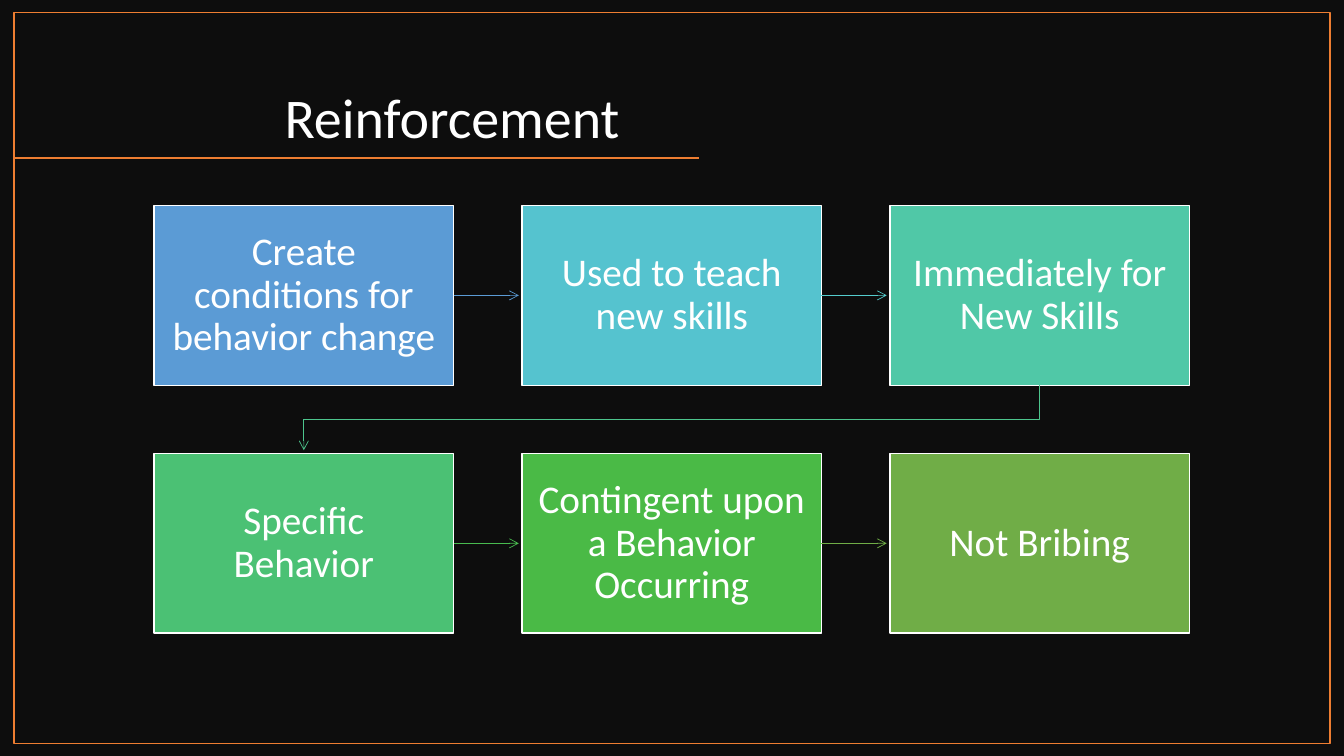
from lxml import etree
from pptx import Presentation
from pptx.dml.color import RGBColor
from pptx.enum.shapes import MSO_CONNECTOR, MSO_SHAPE
from pptx.enum.text import MSO_ANCHOR, PP_ALIGN
from pptx.oxml.ns import qn
from pptx.util import Pt

NIGHT = RGBColor(0x0D, 0x0D, 0x0D)
WHITE = RGBColor(0xFF, 0xFF, 0xFF)
ORANGE = RGBColor(0xED, 0x7D, 0x31)
BLUE = RGBColor(0x5B, 0x9B, 0xD5)
CYAN = RGBColor(0x55, 0xC3, 0xCF)
AQUA = RGBColor(0x54, 0xCC, 0xCD)
TEAL = RGBColor(0x50, 0xC8, 0xA7)
JADE = RGBColor(0x4D, 0xC5, 0x8D)
MINT = RGBColor(0x4B, 0xC1, 0x74)
FERN = RGBColor(0x48, 0xBB, 0x4F)
GREEN = RGBColor(0x4A, 0xBA, 0x46)
OLIVE = RGBColor(0x70, 0xAD, 0x47)

STEPS = [
    ("Create conditions for behavior change", BLUE, BLUE),
    ("Used to teach new skills", CYAN, AQUA),
    ("Immediately for New Skills", TEAL, JADE),
    ("Specific Behavior", MINT, FERN),
    ("Contingent upon a Behavior Occurring", GREEN, OLIVE),
    ("Not Bribing", OLIVE, None),
]
COLUMNS = 3
LEFT, TOP = 110.1, 146.8
STEP_WIDTH, STEP_HEIGHT = 213.9, 128.4
COLUMN_PITCH, ROW_PITCH = 262.8, 177.1
ARROW_GAP = 2.3


class SlideBuilder:
    font = "Calibri"

    def __init__(self, slide):
        self.slide = slide
        fill = slide.background.fill
        fill.solid()
        fill.fore_color.rgb = NIGHT

    def add_text(self, frame, text, size, align, anchor, insets):
        frame.word_wrap = True
        frame.vertical_anchor = anchor
        frame.margin_left, frame.margin_top, frame.margin_right, frame.margin_bottom = map(Pt, insets)
        paragraph = frame.paragraphs[0]
        paragraph.alignment = align
        paragraph.line_spacing = 0.9
        run = paragraph.add_run()
        run.text = text
        run.font.name = self.font
        run.font.size = Pt(size)
        run.font.color.rgb = WHITE

    def title(self, text, left, top, width, height, insets):
        heading = self.slide.shapes.title
        heading.left, heading.top, heading.width, heading.height = map(Pt, (left, top, width, height))
        self.add_text(heading.text_frame, text, 40, PP_ALIGN.RIGHT, MSO_ANCHOR.BOTTOM, insets)

    def box(self, left, top, width, height, outline, fill=None):
        box = self.slide.shapes.add_shape(MSO_SHAPE.RECTANGLE, *map(Pt, (left, top, width, height)))
        box.shadow.inherit = False
        if fill is None:
            box.fill.background()
        else:
            box.fill.solid()
            box.fill.fore_color.rgb = fill
        box.line.color.rgb = outline
        box.line.width = Pt(1)
        return box

    def step(self, text, left, top, fill):
        step = self.box(left, top, STEP_WIDTH, STEP_HEIGHT, WHITE, fill)
        self.add_text(step.text_frame, text, 28, PP_ALIGN.CENTER, MSO_ANCHOR.MIDDLE, [10.8] * 4)

    def line(self, start, end, color, width):
        line = self.slide.shapes.add_connector(MSO_CONNECTOR.STRAIGHT, *map(Pt, start + end))
        line.line.color.rgb = color
        line.line.width = Pt(width)
        etree.SubElement(line._element.spPr, qn("a:effectLst"))
        return line

    def arrowhead(self, shape):
        outline = shape._element.spPr.find(qn("a:ln"))
        etree.SubElement(outline, qn("a:tailEnd"), type="arrow")

    def arrow(self, start, end, color):
        self.arrowhead(self.line(start, end, color, 0.5))

    def bent_arrow(self, points, color):
        start, *rest = [tuple(map(Pt, point)) for point in points]
        builder = self.slide.shapes.build_freeform(*start)
        builder.add_line_segments(rest, close=False)
        bend = builder.convert_to_shape()
        bend.shadow.inherit = False
        bend.fill.background()
        bend.line.color.rgb = color
        bend.line.width = Pt(0.5)
        self.arrowhead(bend)


def main():
    presentation = Presentation()
    presentation.slide_width, presentation.slide_height = Pt(960), Pt(540)
    builder = SlideBuilder(presentation.slides.add_slide(presentation.slide_layouts[5]))

    builder.title("Reinforcement", 66, 30, 433, 81, (7.2, 3.6, 56.5, 3.6))
    builder.line((499, 113), (10, 113), ORANGE, 1)
    builder.box(10, 9, 940, 522, ORANGE)

    for index, (text, fill, arrow_color) in enumerate(STEPS):
        row, column = divmod(index, COLUMNS)
        left = LEFT + column * COLUMN_PITCH
        top = TOP + row * ROW_PITCH
        builder.step(text, left, top, fill)
        if arrow_color is None:
            continue
        if column < COLUMNS - 1:
            middle = top + STEP_HEIGHT / 2
            builder.arrow((left + STEP_WIDTH, middle), (left + COLUMN_PITCH - ARROW_GAP, middle), arrow_color)
        else:
            center, first_center = left + STEP_WIDTH / 2, LEFT + STEP_WIDTH / 2
            bottom, next_top = top + STEP_HEIGHT, top + ROW_PITCH
            bend = (bottom + next_top) / 2
            builder.bent_arrow(
                [(center, bottom), (center, bend), (first_center, bend), (first_center, next_top - ARROW_GAP)],
                arrow_color,
            )

    presentation.save("out.pptx")


if __name__ == "__main__":
    main()
